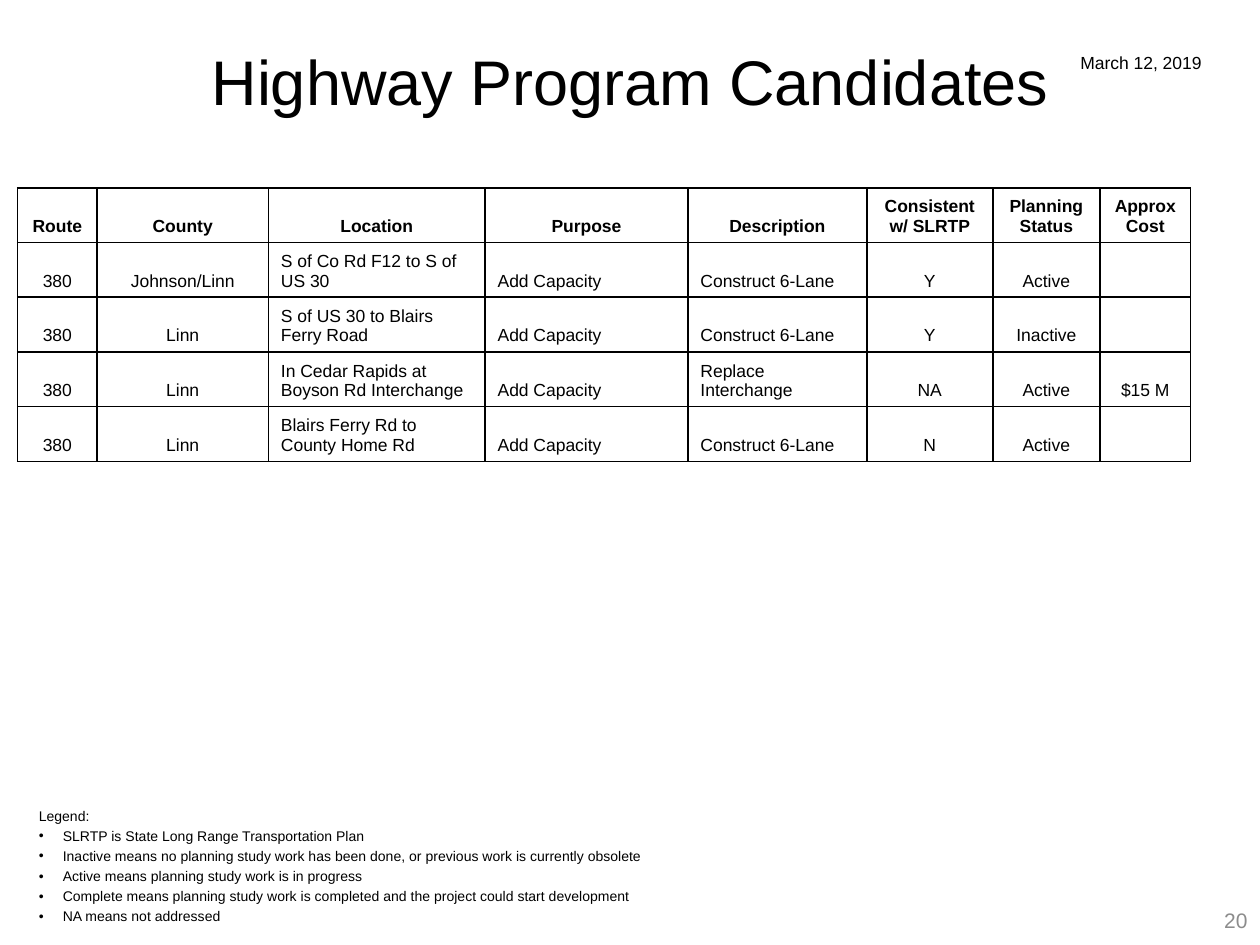
"""Build the Highway Program Candidates slide."""
from lxml import etree
from pptx import Presentation, util as u
from pptx.dml.color import RGBColor
from pptx.enum import text
from pptx.oxml.ns import qn

COLORS = {"ink": "000000", "paper": "FFFFFF", "number": "8C8C8C"}
LEFT, CENTER, RIGHT = text.PP_ALIGN.LEFT, text.PP_ALIGN.CENTER, text.PP_ALIGN.RIGHT
MIDDLE, TOP = text.MSO_ANCHOR.MIDDLE, text.MSO_ANCHOR.TOP

COLUMNS = [
    ("Route", 0.63, CENTER), ("County", 1.36, CENTER), ("Location", 1.72, LEFT),
    ("Purpose", 1.61, LEFT), ("Description", 1.42, LEFT),
    ("Consistent\nw/ SLRTP", 1, CENTER), ("Planning Status", 0.85, CENTER),
    ("Approx Cost", 0.72, CENTER),
]
CANDIDATES = [
    ("380", "Johnson/Linn", "S of Co Rd F12 to S of US 30", "Add Capacity",
     "Construct 6-Lane", "Y", "Active", ""),
    ("380", "Linn", "S of US 30 to Blairs Ferry Road", "Add Capacity",
     "Construct 6-Lane", "Y", "Inactive", ""),
    ("380", "Linn", "In Cedar Rapids at Boyson Rd Interchange", "Add Capacity",
     "Replace Interchange", "NA", "Active", "$15 M"),
    ("380", "Linn", "Blairs Ferry Rd to County Home Rd", "Add Capacity",
     "Construct 6-Lane", "N", "Active", ""),
]
LEGEND = [
    "Legend:",
    "SLRTP is State Long Range Transportation Plan",
    "Inactive means no planning study work has been done, or previous work is currently obsolete",
    "Active means planning study work is in progress",
    "Complete means planning study work is completed and the project could start development",
    "NA means not addressed",
]
TABLE_LEFT, TABLE_TOP, ROW_HEIGHT = 0.14, 1.49, 0.41


def write(tf, content, size, align=LEFT, color="ink", bold=False, **spacing):
    tf.text = content
    for p in tf.paragraphs:
        for name, value in {"alignment": align, **spacing}.items():
            setattr(p, name, value)
        for r in p.runs:
            for name, value in {"name": "Arial", "size": u.Pt(size), "bold": bold}.items():
                setattr(r.font, name, value)
            r.font.color.rgb = RGBColor.from_string(COLORS[color])


def add_text(s, box, content, size, anchor=TOP, wrap=True, **style):
    tf = s.shapes.add_textbox(*map(u.Inches, box)).text_frame
    tf.word_wrap, tf.vertical_anchor = wrap, anchor
    write(tf, content, size, **style)
    return tf


def add_bullet(p, indent):
    pPr = p._p.get_or_add_pPr()
    pPr.set("marL", str(u.Inches(indent)))
    pPr.set("indent", str(-u.Inches(indent)))
    etree.SubElement(pPr, qn("a:buFont"), typeface="Arial")
    etree.SubElement(pPr, qn("a:buChar"), char="•")


def format_cell(cell):
    tcPr = cell._tc.get_or_add_tcPr()
    for side in ("lnL", "lnR", "lnT", "lnB"):
        ln = etree.SubElement(tcPr, qn(f"a:{side}"), w=str(u.Pt(1)))
        fill = etree.SubElement(ln, qn("a:solidFill"))
        etree.SubElement(fill, qn("a:srgbClr"), val=COLORS["ink"])
    cell.fill.solid()
    cell.fill.fore_color.rgb = RGBColor.from_string(COLORS["paper"])
    cell.vertical_anchor = text.MSO_ANCHOR.BOTTOM


def add_candidates(s):
    headings, widths, aligns = zip(*COLUMNS)
    rows = [headings, *CANDIDATES]
    box = (TABLE_LEFT, TABLE_TOP, sum(widths), ROW_HEIGHT * len(rows))
    table = s.shapes.add_table(len(rows), len(COLUMNS), *map(u.Inches, box)).table
    for column, width in zip(table.columns, widths):
        column.width = u.Inches(width)
    for i, row in enumerate(rows):
        table.rows[i].height = u.Inches(ROW_HEIGHT)
        for j, content in enumerate(row):
            cell = table.cell(i, j)
            format_cell(cell)
            write(cell.text_frame, content, 10, bold=i == 0,
                  align=aligns[j] if i else CENTER)


def main():
    prs = Presentation()
    prs.slide_width, prs.slide_height = u.Inches(10), u.Inches(7.5)
    s = prs.slides.add_slide(prs.slide_layouts[6])
    add_text(s, (0, 0.21, 10, 0.95), "Highway Program Candidates", 36,
             anchor=MIDDLE, align=CENTER, line_spacing=0.85)
    add_candidates(s)
    add_text(s, (7.67, 7.1, 2.33, 0.4), "20", 12, anchor=MIDDLE, align=RIGHT, color="number")
    legend = add_text(s, (0.21, 6.36, 5.04, 1.04), "\n".join(LEGEND), 8,
                      wrap=False, space_before=u.Pt(1.9))
    for p in legend.paragraphs[1:]:
        add_bullet(p, 0.19)
    add_text(s, (8.47, 0.36, 1.17, 0.27), "March 12, 2019", 10, wrap=False, align=CENTER)
    prs.save("out.pptx")


if __name__ == "__main__":
    main()
